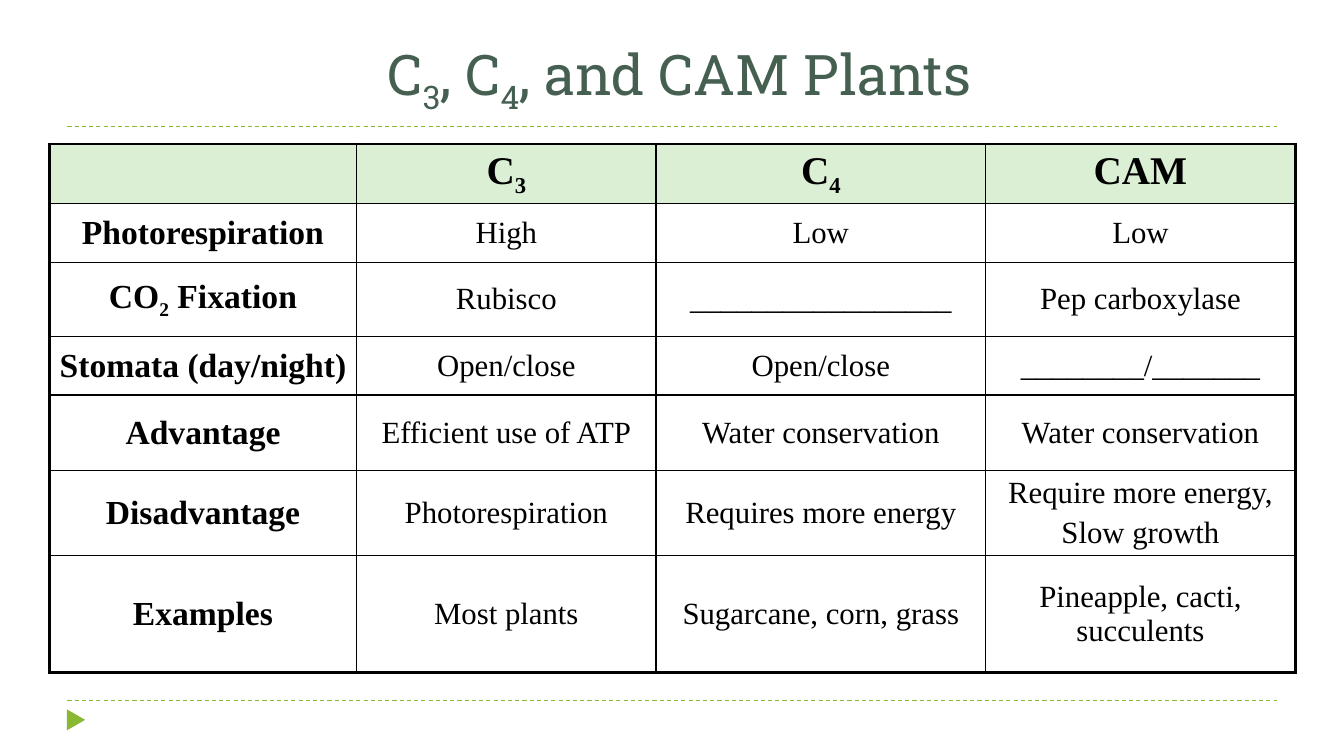
"""Build the slide that compares C3, C4 and CAM plants."""
import dataclasses
import typing

import pptx
import pptx.dml.color
import pptx.enum.dml
import pptx.enum.shapes
import pptx.enum.text
import pptx.oxml
import pptx.oxml.ns
import pptx.util

Cm = pptx.util.Cm
Pt = pptx.util.Pt
INK = {"title": "455F51", "text": "000000", "head": "DBEFD4", "accent": "8AB833"}
SERIF = "Times New Roman"
WIDE, THIN = 2.25, 1


def tint(name: str) -> pptx.dml.color.RGBColor:
    """Return a named colour."""
    return pptx.dml.color.RGBColor.from_string(INK[name])


def apply(item: typing.Any, form: dict) -> None:
    """Set each format value on the item."""
    for name, value in form.items():
        setattr(item, name, value)


TITLE = {"name": "Roboto Slab", "size": Pt(40), "bold": False}
HEAD = {"name": SERIF, "size": Pt(28), "bold": True}
LABEL = {"name": SERIF, "size": Pt(24), "bold": True}
BODY = {"name": SERIF, "size": Pt(22), "bold": False}


@dataclasses.dataclass
class Row:
    """One table row; bars in its texts enclose subscripts."""
    height: float
    cells: tuple[str, ...]


@dataclasses.dataclass
class Rule:
    """One dashed line across the slide."""
    top: float
    left: float = 1.7
    right: float = 32.18


RULES = [Rule(17.65), Rule(3.18)]
COLS = [7.75, 7.54, 8.31, 7.8]
ROWS = [
    Row(1.47, ("", "C|3|", "C|4|", "CAM")),
    Row(1.47, ("Photorespiration", "High", "Low", "Low")),
    Row(1.88, ("CO|2| Fixation", "Rubisco", "_________________", "Pep carboxylase")),
    Row(1.47, ("Stomata (day/night)", "Open/close", "Open/close", "________/_______")),
    Row(1.91, ("Advantage", "Efficient use of ATP", "Water conservation",
               "Water conservation")),
    Row(2.01, ("Disadvantage", "Photorespiration", "Requires more energy",
               "Require more energy,\nSlow growth")),
    Row(2.95, ("Examples", "Most plants", "Sugarcane, corn, grass",
               "Pineapple, cacti, succulents")),
]


def write(frame: typing.Any, text: str, form: dict, ink: str) -> None:
    """Fill a text frame with centred lines and their subscripts."""
    for at, line in enumerate(text.split("\n")):
        para = frame.add_paragraph() if at else frame.paragraphs[0]
        para.alignment = pptx.enum.text.PP_ALIGN.CENTER
        if at:
            para.space_before = Pt(4.4)
        for part, words in enumerate(line.split("|")):
            if not words:
                continue
            run = para.add_run()
            run.text = words
            apply(run.font, form)
            run.font.color.rgb = tint(ink)
            if part % 2:
                run.font._element.set("baseline", "-25000")


def edge(cell: typing.Any, sides: dict[str, float]) -> None:
    """Draw the borders of a cell."""
    for side, width in sides.items():
        cell._tc.get_or_add_tcPr().append(pptx.oxml.parse_xml(
            f'<a:ln{side} {pptx.oxml.ns.nsdecls("a")} w="{Pt(width)}">'
            f'<a:solidFill><a:srgbClr val="{INK["text"]}"/></a:solidFill></a:ln{side}>'))


def draw_rule(slide: typing.Any, rule: Rule) -> None:
    """Draw a dashed line."""
    line = slide.shapes.add_connector(
        pptx.enum.shapes.MSO_CONNECTOR.STRAIGHT,
        Cm(rule.left), Cm(rule.top), Cm(rule.right), Cm(rule.top))
    apply(line.line, {"width": Pt(0.75), "dash_style": pptx.enum.dml.MSO_LINE.DASH})
    line.line.color.rgb = tint("accent")
    line._element.spPr.append(
        pptx.oxml.parse_xml(f'<a:effectLst {pptx.oxml.ns.nsdecls("a")}/>'))


def draw_mark(slide: typing.Any) -> None:
    """Draw the small triangle at the foot."""
    mark = slide.shapes.add_shape(
        pptx.enum.shapes.MSO_SHAPE.ISOSCELES_TRIANGLE,
        Cm(1.65), Cm(17.91), Cm(0.53), Cm(0.46))
    mark.rotation = 90
    mark.shadow.inherit = False
    mark.fill.solid()
    mark.fill.fore_color.rgb = tint("accent")
    mark.line.fill.background()


def draw_title(slide: typing.Any) -> None:
    """Place and write the title."""
    title = slide.shapes.title
    apply(title, {"left": Cm(1.65), "top": Cm(0), "width": Cm(30.96), "height": Cm(3.05)})
    apply(title.text_frame, {"vertical_anchor": pptx.enum.text.MSO_ANCHOR.BOTTOM,
                             "word_wrap": True,
                             "auto_size": pptx.enum.text.MSO_AUTO_SIZE.NONE})
    write(title.text_frame, "C|3|, C|4|, and CAM Plants", TITLE, "title")


def draw_table(slide: typing.Any) -> None:
    """Draw the table of plant types."""
    table = slide.shapes.add_table(
        len(ROWS), len(COLS), Cm(1.24), Cm(3.63),
        Cm(sum(COLS)), Cm(sum(row.height for row in ROWS))).table
    apply(table, {"first_row": False, "horz_banding": False})
    for col, width in zip(table.columns, COLS):
        col.width = Cm(width)
    for y, row in enumerate(ROWS):
        table.rows[y].height = Cm(row.height)
        for x, text in enumerate(row.cells):
            cell = table.cell(y, x)
            edge(cell, {"L": THIN if x else WIDE,
                        "R": WIDE if x == len(COLS) - 1 else THIN,
                        "T": THIN if y else WIDE,
                        "B": WIDE if y == len(ROWS) - 1 else THIN})
            if y:
                cell.fill.background()
                cell.vertical_anchor = pptx.enum.text.MSO_ANCHOR.MIDDLE
            else:
                cell.fill.solid()
                cell.fill.fore_color.rgb = tint("head")
            form = HEAD if y == 0 else BODY if x else LABEL
            write(cell.text_frame, text, form, "text")


def main() -> None:
    """Build and save the slide."""
    deck = pptx.Presentation()
    apply(deck, {"slide_width": Cm(33.87), "slide_height": Cm(19.05)})
    slide = deck.slides.add_slide(deck.slide_layouts.get_by_name("Title Only"))
    for rule in RULES:
        draw_rule(slide, rule)
    draw_mark(slide)
    draw_title(slide)
    draw_table(slide)
    deck.save("out.pptx")


if __name__ == "__main__":
    main()
